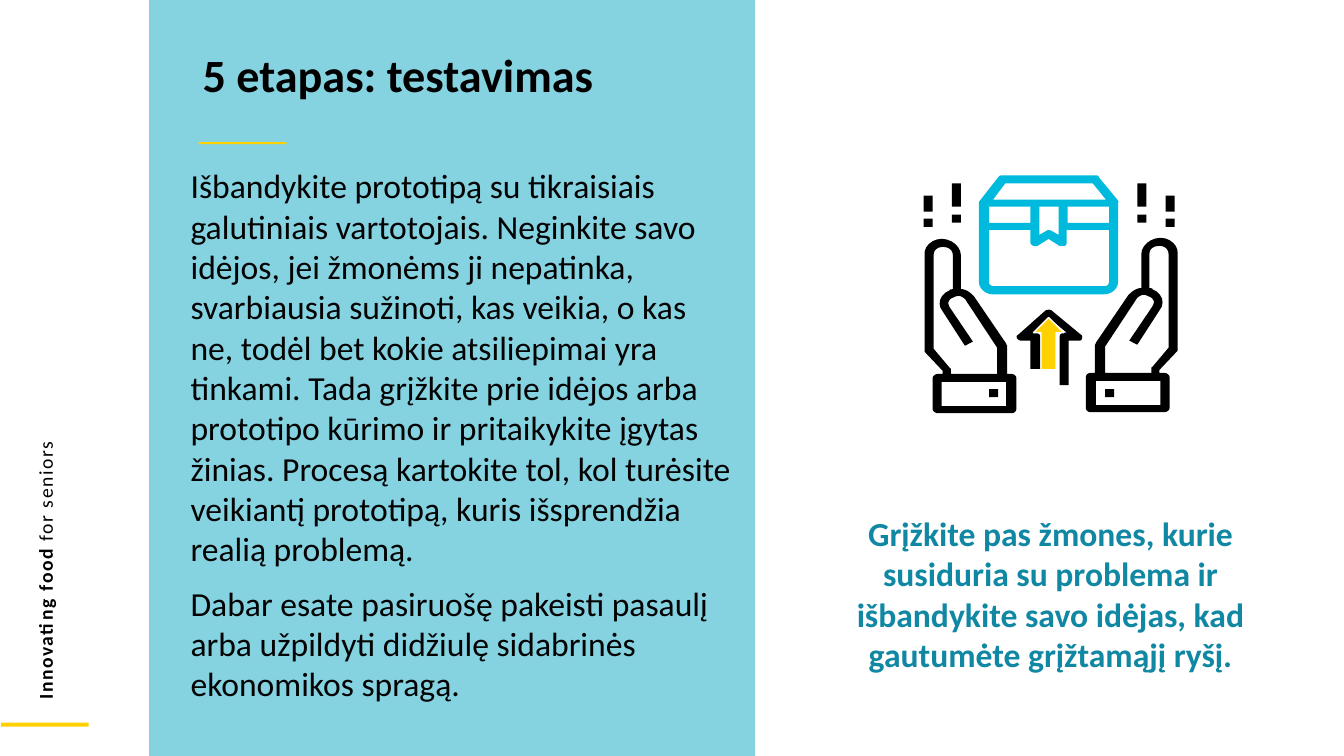
from dataclasses import dataclass

from pptx import Presentation
from pptx.dml.color import RGBColor
from pptx.enum.shapes import MSO_SHAPE
from pptx.enum.text import MSO_ANCHOR, MSO_AUTO_SIZE, PP_ALIGN
from pptx.util import Pt

RECTANGLE, UP_ARROW = MSO_SHAPE.RECTANGLE, MSO_SHAPE.UP_ARROW
LEFT, CENTER, TOP = PP_ALIGN.LEFT, PP_ALIGN.CENTER, MSO_ANCHOR.TOP
NO_AUTOFIT = MSO_AUTO_SIZE.NONE
PX = 9144
TITLE_ONLY = 5
CURVE_STEPS = 6
HAND_WIDTH = 92


@dataclass(frozen=True)
class Theme:
    """Colours, font and type sizes of the slide."""
    font: str = "Calibri"
    panel: str = "85D2E1"
    accent: str = "FFD100"
    parcel: str = "00BADE"
    caption: str = "1188A3"
    body: str = "030303"
    black: str = "000000"
    white: str = "FFFFFF"
    title_size: int = 33
    body_size: int = 24
    brand_size: int = 14


THEME = Theme()

BODY = [
    "Išbandykite prototipą su tikraisiais galutiniais vartotojais. Neginkite savo idėjos, "
    "jei žmonėms ji nepatinka, svarbiausia sužinoti, kas veikia, o kas ne, todėl bet kokie "
    "atsiliepimai yra tinkami. Tada grįžkite prie idėjos arba prototipo kūrimo ir pritaikykite "
    "įgytas žinias. Procesą kartokite tol, kol turėsite veikiantį prototipą, kuris išsprendžia "
    "realią problemą.",
    "Dabar esate pasiruošę pakeisti pasaulį arba užpildyti didžiulę sidabrinės ekonomikos spragą.",
]
CAPTION = ("Grįžkite pas žmones, kurie susiduria su problema ir išbandykite savo idėjas, "
           "kad gautumėte grįžtamąjį ryšį.")

PARCEL = [
    [(138, 25), (119, 2), (119, 0, 117, 0, 115, 0), (23, 0), (22, 0, 20, 0, 19, 2), (1, 25),
     (0, 26, 0, 26, 0, 27), (0, 106), (0, 112, 6, 118, 14, 118), (124, 118),
     (132, 118, 138, 112, 138, 106), (138, 27), (139, 26, 138, 26, 138, 25)],
    [(26, 8), (113, 8), (126, 24), (14, 24)],
    [(79, 31), (79, 59), (72, 55), (70, 54, 68, 54, 67, 55), (60, 59), (60, 31)],
    [(10, 31), (51, 31), (51, 47), (10, 47)],
    [(129, 106), (129, 108, 127, 110, 125, 110), (15, 110), (12, 110, 10, 108, 10, 106),
     (10, 54), (51, 54), (51, 66), (51, 68, 52, 69, 54, 70), (55, 70, 57, 70, 58, 70),
     (69, 63), (80, 70), (82, 70, 83, 70, 85, 70), (87, 69, 87, 68, 87, 66), (87, 54), (129, 54)],
    [(129, 47), (88, 47), (88, 31), (129, 31)],
]
ARROW_OUTLINE = [
    [(34, 1), (33, 0, 30, 0, 28, 1), (1, 25), (-1, 26, -1, 27, 0, 29), (1, 30, 2, 31, 4, 31),
     (13, 31), (13, 59), (23, 59), (23, 27), (23, 25, 20, 23, 18, 23), (16, 23), (32, 9),
     (49, 23), (46, 23), (44, 23, 42, 25, 42, 27), (42, 75), (51, 75), (51, 31), (60, 31),
     (62, 31, 64, 31, 64, 29), (65, 27, 64, 25, 63, 25)],
]
HAND = [
    [(74, 0), (64, 0, 55, 8, 55, 16), (55, 50), (55, 50, 54, 50, 53, 50),
     (48, 51, 45, 54, 42, 57), (10, 104), (10, 105, 9, 106, 9, 106), (9, 134), (5, 134),
     (2, 134, 0, 136, 0, 138), (0, 169), (0, 171, 2, 173, 5, 173), (78, 173),
     (80, 173, 83, 171, 83, 169), (83, 138), (83, 136, 80, 134, 78, 134), (73, 134), (73, 131),
     (91, 112), (91, 112, 91, 111, 91, 110), (91, 16), (92, 8, 84, 0, 74, 0)],
    [(74, 166), (10, 166), (10, 142), (74, 142)],
    [(82, 109), (66, 128), (65, 128, 65, 129, 65, 130), (65, 134), (19, 134), (19, 108),
     (50, 61), (51, 59, 53, 58, 55, 57), (58, 56, 60, 57, 62, 58), (65, 59, 66, 60, 67, 62),
     (68, 64, 67, 66, 66, 68), (43, 102), (51, 106), (73, 72), (79, 65, 76, 55, 66, 51),
     (66, 50, 65, 50, 63, 50), (63, 16), (63, 11, 67, 8, 73, 8), (78, 8, 82, 11, 82, 16)],
]


def add_block(shapes, preset, box, color):
    """Add a plain filled preset shape without outline or shadow."""
    shape = shapes.add_shape(preset, *(length * PX for length in box))
    shape.shadow.inherit = False
    shape.fill.solid()
    shape.fill.fore_color.rgb = RGBColor.from_string(color)
    shape.line.fill.background()
    return shape


def format_paragraph(paragraph, size, color, bold=False, align=LEFT):
    """Set the alignment and run formatting of a paragraph."""
    paragraph.alignment = align
    for run in paragraph.runs:
        run.font.name = THEME.font
        run.font.size = Pt(size)
        run.font.bold = bold
        run.font.color.rgb = RGBColor.from_string(color)


def add_text_frame(slide, box):
    """Add a wrapping text box and return it with its text frame."""
    shape = slide.shapes.add_textbox(*(length * PX for length in box))
    shape.text_frame.word_wrap = True
    return shape, shape.text_frame


def flatten(contour):
    """Turn corners and cubic curves into a list of points."""
    points = []
    for step in contour:
        if len(step) == 2:
            points.append(step)
            continue
        corners = (points[-1], step[:2], step[2:4], step[4:])
        for index in range(1, CURVE_STEPS + 1):
            t = index / CURVE_STEPS
            weights = ((1 - t) ** 3, 3 * t * (1 - t) ** 2, 3 * t * t * (1 - t), t ** 3)
            points.append(tuple(sum(weight * corner[axis] for weight, corner in zip(weights, corners))
                                for axis in (0, 1)))
    return points


def add_outline(shapes, contours, left, top, color, mirror_width=None):
    """Add a filled freeform with holes, optionally mirrored left to right."""
    builder = None
    for contour in contours:
        points = [((left + (x if mirror_width is None else mirror_width - x)) * PX, (top + y) * PX)
                  for x, y in flatten(contour)]
        if builder is None:
            builder = shapes.build_freeform(*points[0], scale=1.0)
        else:
            builder.move_to(*points[0])
        builder.add_line_segments(points[1:], close=True)
    shape = builder.convert_to_shape()
    shape.shadow.inherit = False
    shape.fill.solid()
    shape.fill.fore_color.rgb = RGBColor.from_string(color)
    shape.line.fill.background()


def add_sidebar(slide, left, top):
    """Add the vertical brand line and the accent bar below it."""
    add_block(slide.shapes, RECTANGLE, (left + 1, top + 717, 87, 4), THEME.accent)
    shape, frame = add_text_frame(slide, (left - 332, top + 310, 754, 34))
    shape.rotation = 270
    paragraph = frame.paragraphs[0]
    for text in ("Innovating food ", "for seniors"):
        paragraph.add_run().text = text
    format_paragraph(paragraph, THEME.brand_size, THEME.black, bold=True)
    paragraph.runs[1].font.bold = False
    for run in paragraph.runs:
        run.font._element.set("spc", "110")


def add_panel(slide, left, top, width, height):
    """Add the coloured panel with title, accent rule and body text."""
    add_block(slide.shapes, RECTANGLE, (left, top, width, height), THEME.panel)
    add_block(slide.shapes, RECTANGLE, (left + 49, top + 141, 87, 2), THEME.accent)
    title = slide.shapes.title
    title._element.getparent().append(title._element)
    title.left, title.top, title.width, title.height = (
        length * PX for length in (left + 43, top + 47, width - 43, 90))
    frame = title.text_frame
    frame.text = "5 etapas: testavimas"
    frame.auto_size = NO_AUTOFIT
    frame.vertical_anchor = TOP
    frame.paragraphs[0].line_spacing = 0.9
    format_paragraph(frame.paragraphs[0], THEME.title_size, THEME.black, bold=True)

    _, frame = add_text_frame(slide, (left + 6, top + 159, width - 19, height - 159))
    frame.margin_left = 35 * PX
    frame.text = "\n".join(BODY)
    for paragraph in frame.paragraphs:
        format_paragraph(paragraph, THEME.body_size, THEME.body)
    frame.paragraphs[1].space_before = Pt(10)


def add_parcel_icon(slide, left, top):
    """Add two hands lifting a parcel, with sparks and an upward arrow."""
    shapes = slide.shapes.add_group_shape().shapes
    add_outline(shapes, PARCEL, left + 55, top, THEME.parcel)
    add_outline(shapes, ARROW_OUTLINE, left + 93, top + 133, THEME.black)
    for x, y, height in ((28, 8, 23), (28, 39, 8), (0, 20, 16), (0, 43, 8)):
        for spark_x in (x, 240 - x):
            add_block(shapes, RECTANGLE, (left + spark_x, top + y, 9, height), THEME.black)
    for x, y, mirror_width, button_x in ((161, 62, None, 19), (0, 63, HAND_WIDTH, 65)):
        add_outline(shapes, HAND, left + x, top + y, THEME.black, mirror_width)
        add_block(shapes, RECTANGLE, (left + x + button_x, top + 212, 9, 8), THEME.black)
    arrow = add_block(slide.shapes, UP_ARROW, (left + 109, top + 141, 30, 52), THEME.accent)
    arrow.line.color.rgb = RGBColor.from_string(THEME.white)
    arrow.line.width = Pt(1)


def add_caption(slide, box):
    """Add the centred call to action."""
    _, frame = add_text_frame(slide, box)
    frame.text = CAPTION
    format_paragraph(frame.paragraphs[0], THEME.body_size, THEME.caption, bold=True, align=CENTER)


def main():
    """Build and save the slide."""
    presentation = Presentation()
    presentation.slide_width, presentation.slide_height = 1333 * PX, 750 * PX
    slide = presentation.slides.add_slide(presentation.slide_layouts[TITLE_ONLY])
    add_panel(slide, 148, 0, 601, 750)
    add_sidebar(slide, 0, 0)
    add_caption(slide, (829, 504, 426, 172))
    add_parcel_icon(slide, 916, 174)
    presentation.save("out.pptx")


if __name__ == "__main__":
    main()
